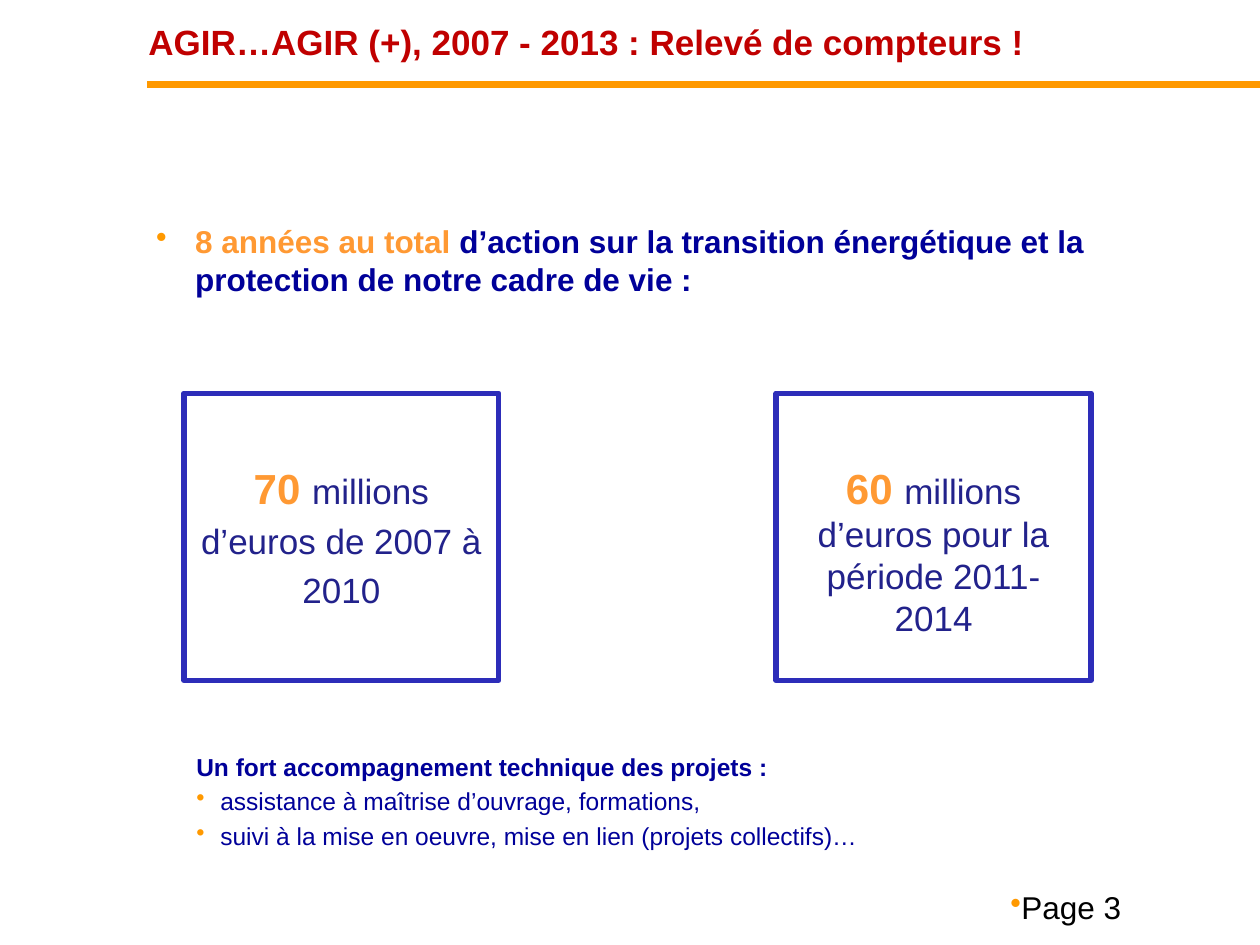
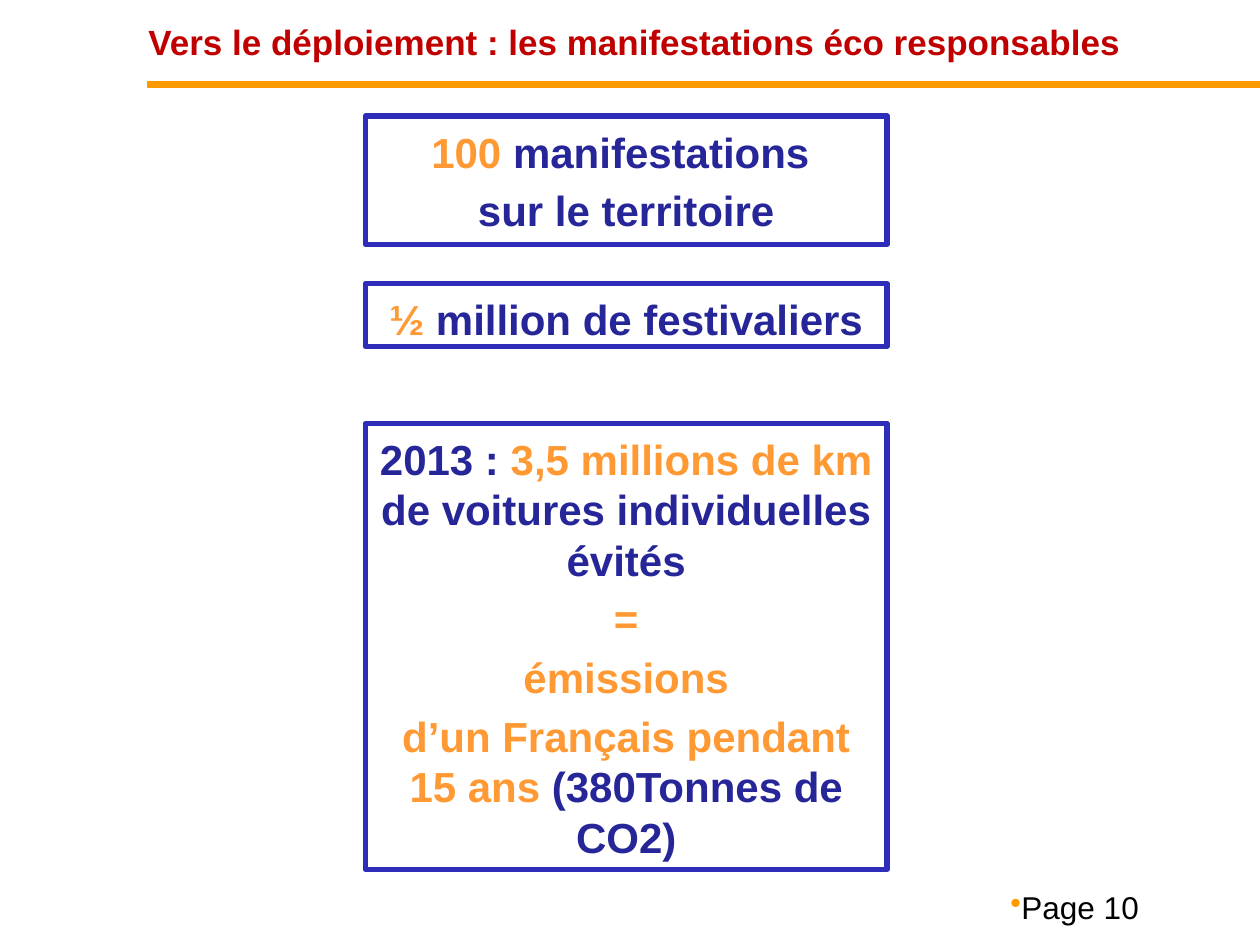
import pptx
import pptx.util
import pptx.dml.color
import pptx.enum.shapes
import pptx.enum.text
import pptx.oxml.ns
from lxml import etree
from pptx.util import Inches

FONT = "Arial"
RED, ORANGE, AMBER, NAVY = "C00000", "FF9900", "FF9933", "000099"
INK, INDIGO, FRAME, BLACK = "22228B", "262699", "2D2DB9", "000000"
CENTER = pptx.enum.text.PP_ALIGN.CENTER


def amber(text):
    return text, 24, AMBER, True


def indigo(text):
    return text, 24, INDIGO, True


def ink(text):
    return text, 20, INK, False


SLIDES = [
    {
        "title": "AGIR…AGIR (+), 2007 - 2013 : Relevé de compteurs !",
        "page": "Page 3",
        "notes": [
            ((1.46, 5.91, 7.2, 0.9), 0.19, [
                (False, [("Un fort accompagnement technique des projets :", 14, NAVY, True)]),
                (True, [("assistance à maîtrise d’ouvrage, formations,", 14, NAVY, False)]),
                (True, [("suivi à la mise en oeuvre, mise en lien (projets collectifs)…",
                         14, NAVY, False)]),
            ]),
            ((1.14, 1.7, 8.19, 0.71), 0.31, [
                (True, [("8 années au total ", 18, AMBER, True),
                        ("d’action sur la transition énergétique et la protection "
                         "de notre cadre de vie :", 18, NAVY, True)]),
            ]),
        ],
        "frames": [
            ((1.46, 3.12, 2.5, 2.28), 0.55, [
                [amber("70 "), ink("millions")],
                [ink("d’euros de 2007 à")],
                [ink("2010")],
            ]),
            ((6.16, 3.12, 2.5, 2.28), 0.55, [
                [amber("60 "), ink("millions d’euros pour la période 2011-2014")],
            ]),
        ],
    },
    {
        "title": "Vers le déploiement : les manifestations éco responsables",
        "page": "Page 10",
        "notes": [],
        "frames": [
            ((2.9, 0.92, 4.14, 1.02), 0.08, [
                [amber("100 "), indigo("manifestations ")],
                [indigo("sur le territoire")],
            ]),
            ((2.9, 2.25, 4.14, 0.5), 0.08, [
                [amber("½ "), indigo("million de festivaliers")],
            ]),
            ((2.9, 3.36, 4.14, 3.54), 0.08, [
                [indigo("2013 : "), amber("3,5 millions de km "),
                 indigo("de voitures individuelles évités")],
                [amber("=")],
                [amber("émissions")],
                [amber("d’un Français pendant 15 ans "), indigo("(380Tonnes de CO2)")],
            ]),
        ],
    },
]


def color(value):
    return pptx.dml.color.RGBColor.from_string(value)


def add_bullet(para, indent):
    properties = para._p.get_or_add_pPr()
    properties.set("marL", str(Inches(indent)))
    properties.set("indent", str(-Inches(indent)))
    tint = etree.SubElement(properties, pptx.oxml.ns.qn("a:buClr"))
    etree.SubElement(tint, pptx.oxml.ns.qn("a:srgbClr"), val=ORANGE)
    etree.SubElement(properties, pptx.oxml.ns.qn("a:buChar"), char="•")


def write(box, paragraphs, indent=0, align=None, top=0.05, anchor="TOP"):
    frame = box.text_frame
    frame.word_wrap = True
    frame.margin_top = Inches(top)
    frame.vertical_anchor = getattr(pptx.enum.text.MSO_ANCHOR, anchor)
    for number, (bulleted, spans) in enumerate(paragraphs):
        para = frame.add_paragraph() if number else frame.paragraphs[0]
        para.alignment = align
        if number:
            para.space_before = pptx.util.Pt(0.2 * spans[0][1])
        if bulleted:
            add_bullet(para, indent)
        for text, size, tone, bold in spans:
            span = para.add_run()
            span.text = text
            span.font.name = FONT
            span.font.size = pptx.util.Pt(size)
            span.font.bold = bold
            span.font.color.rgb = color(tone)


def add_text(page, place, paragraphs, **options):
    write(page.shapes.add_textbox(*map(Inches, place)), paragraphs, **options)


def add_frame(page, place, top, lines):
    box = page.shapes.add_shape(
        pptx.enum.shapes.MSO_SHAPE.RECTANGLE, *map(Inches, place))
    box.shadow.inherit = False
    box.fill.background()
    box.line.color.rgb = color(FRAME)
    box.line.width = pptx.util.Pt(3)
    write(box, [(False, spans) for spans in lines], align=CENTER, top=top)


def add_rule(page):
    rule = page.shapes.add_connector(
        pptx.enum.shapes.MSO_CONNECTOR.STRAIGHT,
        Inches(1.17), Inches(0.67), Inches(10), Inches(0.67))
    rule.line.color.rgb = color(ORANGE)
    rule.line.width = pptx.util.Pt(4.25)
    etree.SubElement(rule._element.spPr, pptx.oxml.ns.qn("a:effectLst"))


def main():
    deck = pptx.Presentation()
    deck.slide_width, deck.slide_height = Inches(10), Inches(7.5)
    for content in SLIDES:
        page = deck.slides.add_slide(deck.slide_layouts[6])
        add_rule(page)
        add_text(page, (1.08, 0.08, 8.67, 0.5),
                 [(False, [(content["title"], 20, RED, True)])], anchor="MIDDLE")
        add_text(page, (7.92, 7, 2.08, 0.5),
                 [(True, [(content["page"], 18, BLACK, False)])])
        for place, indent, paragraphs in content["notes"]:
            add_text(page, place, paragraphs, indent=indent, top=0.06)
        for place, top, lines in content["frames"]:
            add_frame(page, place, top, lines)
    deck.save("out.pptx")


if __name__ == "__main__":
    main()
